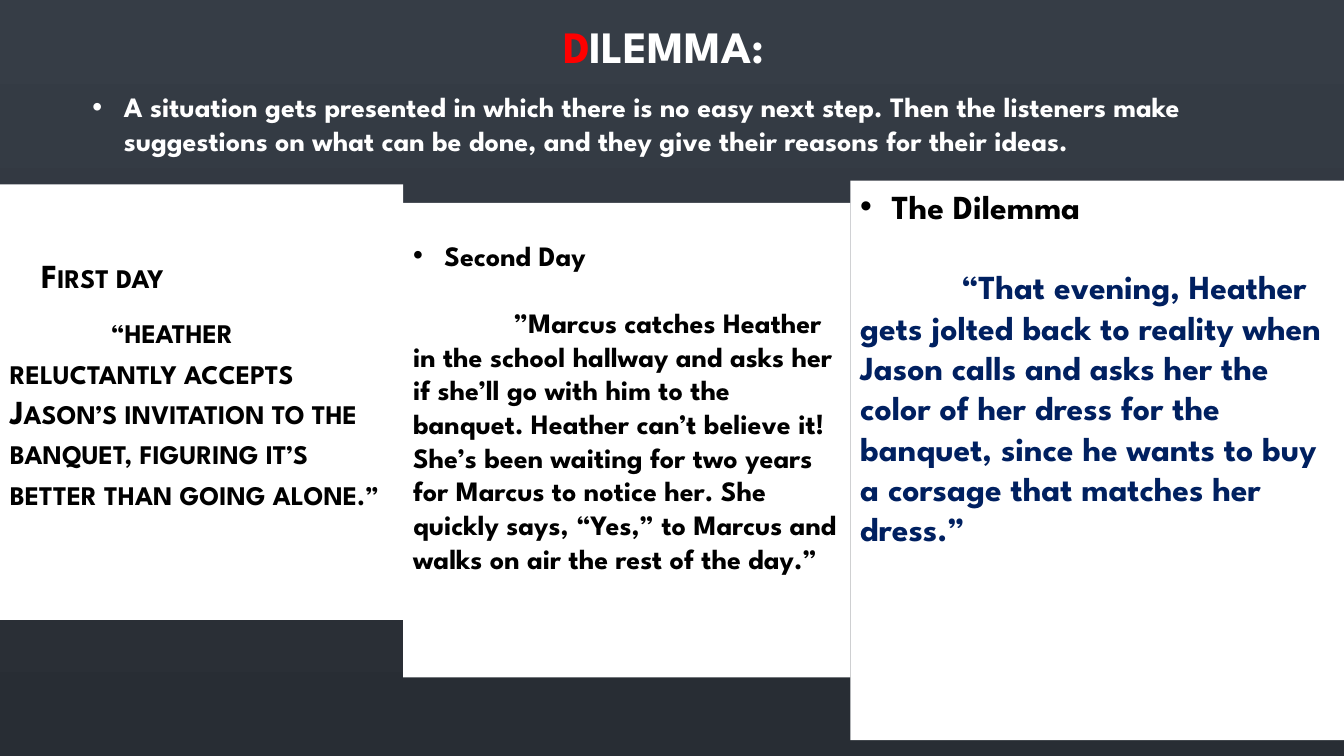
import pptx
import pptx.util
from lxml import etree
from pptx.dml.color import RGBColor
from pptx.enum.shapes import MSO_SHAPE
from pptx.enum.text import MSO_ANCHOR, PP_ALIGN
from pptx.oxml.ns import qn
from pptx.util import Cm, Pt

WHITE = RGBColor(0xFF, 0xFF, 0xFF)
BLACK = RGBColor(0, 0, 0)
RED = RGBColor(0xFF, 0, 0)
NAVY = RGBColor(0, 0x20, 0x60)
SLATE_TOP = RGBColor(0x36, 0x3D, 0x46)
SLATE_BOTTOM = RGBColor(0x28, 0x2D, 0x34)

FONT = "League Spartan"
WIDTH, HEIGHT = 33.87, 19.05
HANG = 0.79
FIRST_LINE = 2.54
LINE_HEIGHT = 1.2

TITLE = [("D", RED), ("ILEMMA:", WHITE)]
SUMMARY = ("A situation gets presented in which there is no easy next step. "
           "Then the listeners make suggestions on what can be done, "
           "and they give their reasons for their ideas.")

# Panels stand side by side; lengths in cm, sizes and gaps in points
PANELS = [
    dict(top=4.65, width=10.16, height=10.97, inset=1.77, size=24, gap=10.8,
         bullet=False, small_caps=True, color=BLACK, heading="First day",
         story="“heather reluctantly accepts Jason’s invitation to the banquet, "
               "figuring it’s better than going alone.”"),
    dict(top=5.11, width=11.27, height=11.96, inset=0.9, size=20,
         gap=20 * LINE_HEIGHT, bullet=True, small_caps=False, color=BLACK,
         heading="Second Day",
         story="”Marcus catches Heather in the school hallway and asks her if "
               "she’ll go with him to the banquet. Heather can’t believe it! "
               "She’s been waiting for two years for Marcus to notice her. She "
               "quickly says, “Yes,” to Marcus and walks on air the rest of the day.”"),
    dict(top=4.55, width=12.44, height=14.1, inset=0.13, size=24,
         gap=24 * LINE_HEIGHT, bullet=True, small_caps=False, color=NAVY,
         heading="The Dilemma",
         story="“That evening, Heather gets jolted back to reality when Jason "
               "calls and asks her the color of her dress for the banquet, since "
               "he wants to buy a corsage that matches her dress.”"),
]


def indent(para, left, first):
    properties = para._p.get_or_add_pPr()
    properties.set("marL", str(Cm(left)))
    properties.set("indent", str(Cm(first)))


def add_bullet(para, color):
    indent(para, HANG, -HANG)
    properties = para._p.get_or_add_pPr()
    bullet_color = etree.SubElement(properties, qn("a:buClr"))
    etree.SubElement(bullet_color, qn("a:srgbClr"), val=str(color))
    etree.SubElement(properties, qn("a:buFont"), typeface="Arial")
    etree.SubElement(properties, qn("a:buChar"), char="•")


def add_span(para, text, size, color, small_caps=False):
    span = para.add_run()
    span.text = text
    for name, value in dict(name=FONT, size=Pt(size), bold=True).items():
        setattr(span.font, name, value)
    span.font.color.rgb = color
    if small_caps:
        span._r.get_or_add_rPr().set("cap", "small")


def prepare_frame(box, inset=0.13, anchor=MSO_ANCHOR.TOP):
    frame = box.text_frame
    layout = dict(word_wrap=True, vertical_anchor=anchor,
                  margin_left=Cm(0.25), margin_right=Cm(0.25),
                  margin_top=Cm(inset), margin_bottom=Cm(0.13))
    for name, value in layout.items():
        setattr(frame, name, value)
    return frame


def add_panel(page, left, panel):
    box = page.shapes.add_shape(MSO_SHAPE.RECTANGLE, Cm(left), Cm(panel["top"]),
                                Cm(panel["width"]), Cm(panel["height"]))
    box.shadow.inherit = False
    box.fill.solid()
    box.fill.fore_color.rgb = WHITE
    box.line.fill.background()
    frame = prepare_frame(box, panel["inset"])

    heading = frame.paragraphs[0]
    if panel["bullet"]:
        add_bullet(heading, BLACK)
    else:
        indent(heading, HANG, 0)
    story = frame.add_paragraph()
    story.space_before = Pt(panel["gap"])
    indent(story, 0, FIRST_LINE)

    for para, part, color in ((heading, "heading", BLACK),
                              (story, "story", panel["color"])):
        para.alignment = PP_ALIGN.LEFT
        add_span(para, panel[part], panel["size"], color, panel["small_caps"])


def main():
    deck = pptx.Presentation()
    deck.slide_width, deck.slide_height = Cm(WIDTH), Cm(HEIGHT)
    page = deck.slides.add_slide(deck.slide_layouts[6])

    backdrop = page.background.fill
    backdrop.gradient()
    backdrop.gradient_angle = 270
    for stop, color in zip(backdrop.gradient_stops, (SLATE_TOP, SLATE_BOTTOM)):
        stop.color.rgb = color

    title = page.shapes.add_textbox(Cm(13.94), Cm(0.15), Cm(7.87), Cm(1.98))
    para = prepare_frame(title, anchor=MSO_ANCHOR.MIDDLE).paragraphs[0]
    for text, color in TITLE:
        add_span(para, text, 32, color)

    summary = page.shapes.add_textbox(Cm(2.08), Cm(2.13), Cm(29.72), Cm(1.96))
    para = prepare_frame(summary).paragraphs[0]
    add_bullet(para, WHITE)
    add_span(para, SUMMARY, 20, WHITE)

    left = 0
    for panel in PANELS:
        add_panel(page, left, panel)
        left += panel["width"]

    deck.save("out.pptx")


if __name__ == "__main__":
    main()
